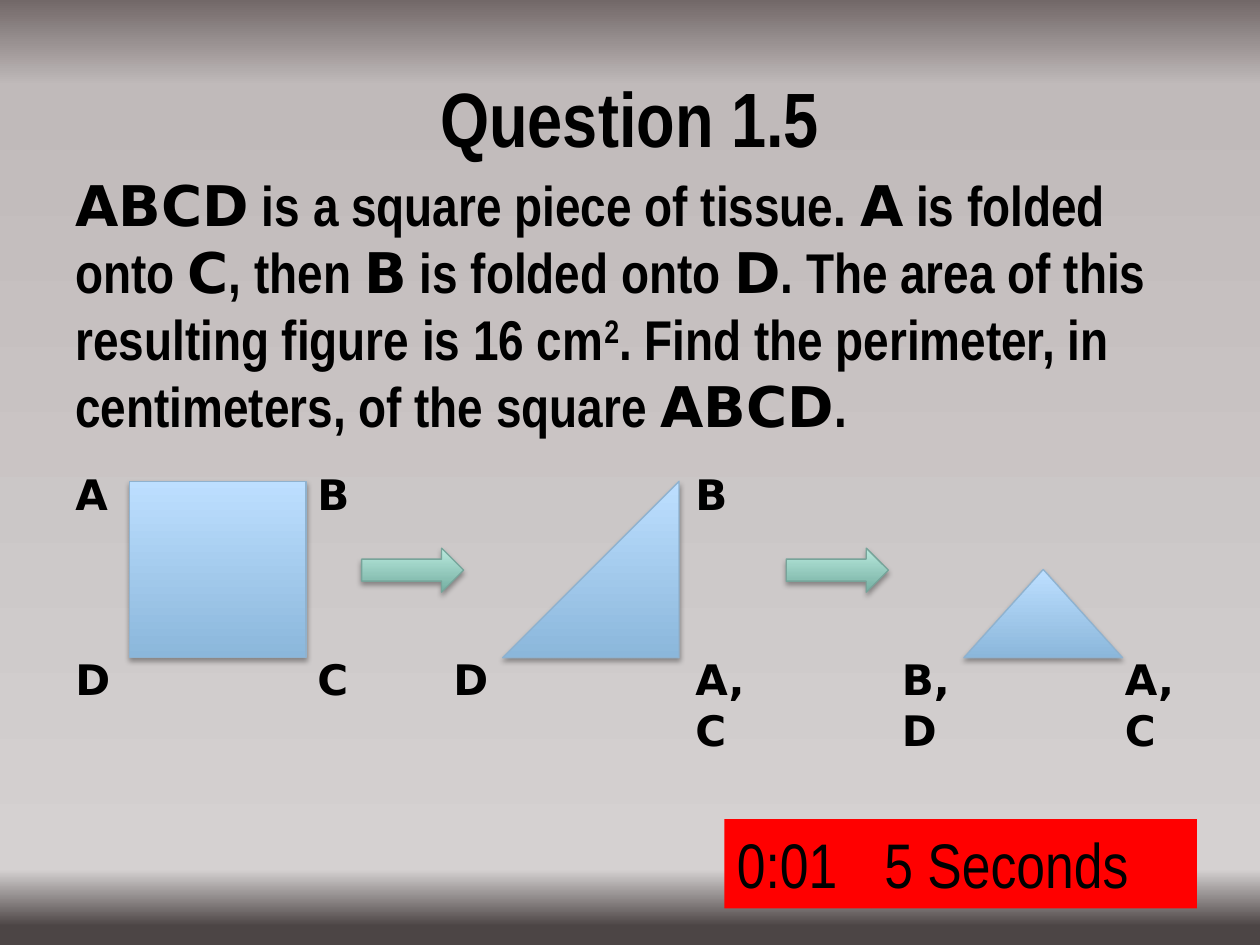
from pptx import Presentation
from pptx.dml.color import RGBColor
from pptx.enum.shapes import MSO_SHAPE
from pptx.enum.text import MSO_ANCHOR, PP_ALIGN
from pptx.oxml import parse_xml
from pptx.oxml.ns import nsdecls, qn
from pptx.util import Inches, Pt

RECT, RIGHT = MSO_SHAPE.RECTANGLE, MSO_SHAPE.RIGHT_TRIANGLE
PEAK, ARROW = MSO_SHAPE.ISOSCELES_TRIANGLE, MSO_SHAPE.RIGHT_ARROW
TOP, MID = MSO_ANCHOR.TOP, MSO_ANCHOR.MIDDLE
LEFT, CENTER = PP_ALIGN.LEFT, PP_ALIGN.CENTER
SANS, MATH = "Arial Narrow", "DejaVu Sans"
BLACK, RED = "000000", "FF0000"
BLUE = ([(0, "8BB7DB"), (100, "BDDFFF")], "8FB2CF")
GREEN = ([(0, "74AEA1"), (100, "BAEADE")], "77A49A")
BACK = [(2, "4C4545"), (8, "D5D1D1"), (91, "C0BABA"), (100, "726868")]
WIDE, HIGH = Inches(10), Inches(7.5)
COL, ROW = WIDE / 10, HIGH / 7.5  # grid of the slide


def color(code):
    return RGBColor.from_string(code)


def place(box):
    x, y, w, h = box
    return int(x * COL), int(y * ROW), int(w * COL), int(h * ROW)


def shade(fill, node, stops):
    """Gradient that runs from bottom to top."""
    fill.gradient()
    fill.gradient_angle = 90
    stop_list = next(node.iter(qn("a:gsLst")))
    for old in list(stop_list):
        stop_list.remove(old)
    for pos, code in stops:
        stop_list.append(parse_xml(
            f'<a:gs {nsdecls("a")} pos="{pos * 1000}">'
            f'<a:srgbClr val="{code}"/></a:gs>'))


def write(shape, text, size=24, face=SANS, bold=True, align=LEFT,
          anchor=TOP, wrap=True):
    """Parts between * use the math face; parts between ^ are raised."""
    frame = shape.text_frame
    frame.word_wrap, frame.vertical_anchor = wrap, anchor
    para = frame.paragraphs[0]
    para.alignment = align
    for i, part in enumerate(text.split("*")):
        for j, bit in enumerate(part.split("^")):
            if not bit:
                continue
            run = para.add_run()
            run.text = bit
            font = run.font
            font.name = MATH if i % 2 else face
            font.size, font.bold = Pt(size), bold
            font.color.rgb = color(BLACK)
            if j % 2:
                font._element.set("baseline", "30000")


def label(slide, box, text, **fmt):
    write(slide.shapes.add_textbox(*place(box)), text, **fmt)


def solid(slide, kind, box, look):
    """Shape with a gradient, a thin line and a soft shadow."""
    stops, edge = look
    shape = slide.shapes.add_shape(kind, *place(box))
    shade(shape.fill, shape._element.spPr, stops)
    shape.line.color.rgb = color(edge)
    shape.line.width = Pt(0.75)
    shape.shadow.inherit = False
    cast = shape._element.spPr.find(qn("a:effectLst"))
    cast.append(parse_xml(
        f'<a:outerShdw {nsdecls("a")} blurRad="{Pt(3.1)}" dist="{Pt(1.8)}" '
        f'dir="5400000" rotWithShape="0"><a:srgbClr val="{BLACK}">'
        '<a:alpha val="35000"/></a:srgbClr></a:outerShdw>'))
    return shape


def figure(slide, kind, box, marks, flip=False):
    """Paper shape with corner marks set off from its top left."""
    shape = solid(slide, kind, box, BLUE)
    if flip:
        shape._element.spPr.find(qn("a:xfrm")).set("flipH", "1")
    x, y, w, h = box
    for text, dx, low in marks:
        top = y + h - 0.08 if low else y - 0.15
        wide = 0.46 if len(text) == 1 else 0.82
        label(slide, (x + dx, top, wide, 0.5), text, face=MATH,
              wrap=text == "A,C")


def folds(slide, box):
    x, y, w, h = box
    figure(slide, RECT, (x, y, h, h),
           [("A", -0.53, 0), ("B", 1.39, 0), ("D", -0.53, 1), ("C", 1.39, 1)])
    figure(slide, RIGHT, (x + 2.96, y, h, h),
           [("B", 1.43, 0), ("D", -0.49, 1), ("A,C", 1.43, 1)], flip=True)
    figure(slide, PEAK, (x + w - 1.26, y + h / 2, 1.26, h / 2),
           [("B,D", -0.59, 1), ("A,C", 1.18, 1)])
    for dx in (1.84, 5.21):
        solid(slide, ARROW, (x + dx, y + 0.53, 0.81, 0.35), GREEN)


def timer(slide, box):
    x, y, w, h = box
    split = 1.17
    for text, left, wide in (("5 Seconds", x + split, w - split),
                             ("0:01", x, split)):
        tile = slide.shapes.add_shape(RECT, *place((left, y, wide, h)))
        tile.fill.solid()
        tile.fill.fore_color.rgb = color(RED)
        tile.line.fill.background()
        tile.shadow.inherit = False
        write(tile, text, size=36, bold=False)


def main():
    deck = Presentation()
    deck.slide_width, deck.slide_height = WIDE, HIGH
    slide = deck.slides.add_slide(deck.slide_layouts[6])
    shade(slide.background.fill, slide._element, BACK)

    # Question
    label(slide, (0.5, 0.3, 9, 1.25), "Question 1.5", size=44,
          align=CENTER, anchor=MID)
    timer(slide, (5.75, 6.5, 3.75, 0.71))
    label(slide, (0.5, 1.3, 9, 4.95),
          "*ABCD* is a square piece of tissue. *A* is folded onto *C*, then "
          "*B* is folded onto *D*. The area of this resulting figure is "
          "16 cm^2^. Find the perimeter, in centimeters, of the square "
          "*ABCD*.", size=32)

    # Folding steps
    folds(slide, (1.03, 3.82, 7.88, 1.4))
    deck.save("out.pptx")


if __name__ == "__main__":
    main()
